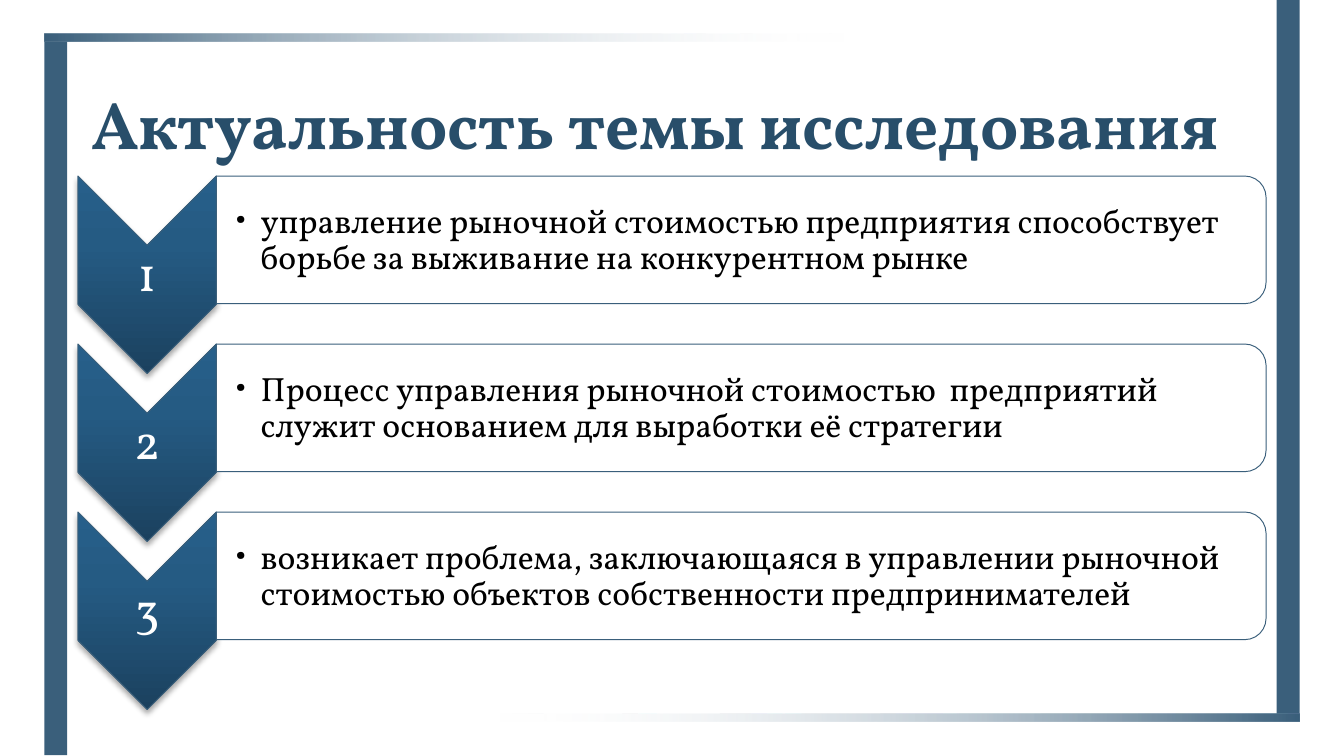
from dataclasses import dataclass

from lxml import etree
from pptx import Presentation
from pptx.dml.color import RGBColor
from pptx.enum.shapes import MSO_SHAPE
from pptx.enum.text import MSO_ANCHOR, MSO_AUTO_SIZE, PP_ALIGN
from pptx.oxml import parse_xml
from pptx.oxml.ns import nsdecls, qn
from pptx.util import Inches, Pt

RECT = MSO_SHAPE.RECTANGLE
CHEVRON = MSO_SHAPE.CHEVRON
ROUND = MSO_SHAPE.ROUND_2_SAME_RECTANGLE
MIDDLE, BOTTOM = MSO_ANCHOR.MIDDLE, MSO_ANCHOR.BOTTOM
LEFT, CENTER = PP_ALIGN.LEFT, PP_ALIGN.CENTER


@dataclass(frozen=True)
class Theme:
    font: str = "Vollkorn"
    bar: str = "3A5F7B"
    title: str = "284E6A"
    white: str = "FFFFFF"
    black: str = "000000"
    # Gradient stops: position in percent, colour, opacity in percent
    fade: tuple = ((0, "3A5F7B", 100), (65, "FFFFFF", 0), (100, "FFFFFF", 0))
    deep: tuple = ((0, "1B415F", 100), (65, "255B83", 100), (100, "275F8A", 100))
    title_size: int = 36
    label_size: int = 26
    body_size: int = 18


THEME = Theme()
WIDTH = 10
HEIGHT = WIDTH * 9 / 16
TOP, STEP = 1.31, 1.25
POINTS = [
    "управление рыночной стоимостью предприятия способствует борьбе за выживание на конкурентном рынке",
    "Процесс управления рыночной стоимостью  предприятий служит основанием для выработки её стратегии",
    "возникает проблема, заключающаяся в управлении рыночной стоимостью объектов собственности предпринимателей",
]


def style(para, size, color, bold=False):
    font = para.font
    font.name, font.size, font.bold = THEME.font, Pt(size), bold
    font.color.rgb = RGBColor.from_string(color)


def shape(slide, kind, x, y, w, h, fill=THEME.white, line=None):
    item = slide.shapes.add_shape(kind, Inches(x), Inches(y), Inches(w), Inches(h))
    item.shadow.inherit = False
    item.fill.solid()
    item.fill.fore_color.rgb = RGBColor.from_string(fill)
    if line:
        item.line.color.rgb = RGBColor.from_string(line)
        item.line.width = Pt(0.5)
    else:
        item.line.fill.background()
    return item


def turned(slide, kind, x, y, w, h):
    """Add a shape turned by 90 degrees that covers the given area."""
    item = shape(slide, kind, x + (w - h) / 2, y + (h - w) / 2, h, w, line=THEME.bar)
    item.rotation = 90
    return item


def shade(item, stops, angle):
    """Replace the solid fill by a linear gradient."""
    marks = "".join(
        f'<a:gs pos="{pos * 1000}"><a:srgbClr val="{color}">'
        f'<a:alpha val="{alpha * 1000}"/></a:srgbClr></a:gs>'
        for pos, color, alpha in stops
    )
    grad = parse_xml(
        f'<a:gradFill {nsdecls("a")} rotWithShape="0"><a:gsLst>{marks}</a:gsLst>'
        f'<a:lin ang="{angle * 60000}" scaled="0"/></a:gradFill>'
    )
    props = item._element.spPr
    props.replace(props.find(qn("a:solidFill")), grad)


def cast(item):
    """Add a soft shadow below the shape."""
    effects = item._element.spPr.find(qn("a:effectLst"))
    effects.append(parse_xml(
        f'<a:outerShdw {nsdecls("a")} blurRad="{Pt(3.1)}" dist="{Pt(2)}" dir="5400000" '
        f'rotWithShape="0"><a:srgbClr val="{THEME.black}"><a:alpha val="35000"/>'
        f'</a:srgbClr></a:outerShdw>'
    ))


def write(slide, text, x, y, w, h, inset, edge):
    """Add a text box with its own left inset and return its paragraph."""
    frame = slide.shapes.add_textbox(Inches(x), Inches(y), Inches(w), Inches(h)).text_frame
    frame.word_wrap = True
    frame.vertical_anchor = MIDDLE
    frame.margin_left = Inches(inset)
    frame.margin_top = frame.margin_right = frame.margin_bottom = Inches(edge)
    frame.text = text
    para = frame.paragraphs[0]
    para.line_spacing = 0.9
    return para


def bullet(para):
    props = para._p.get_or_add_pPr()
    props.set("marL", str(Inches(0.19)))
    props.set("indent", str(Inches(-0.19)))
    etree.SubElement(props, qn("a:buFont")).set("typeface", THEME.font)
    etree.SubElement(props, qn("a:buChar")).set("char", "•")


def add_title(slide, text):
    title = slide.shapes.title
    title.left, title.top = Inches(0.58), Inches(0.38)
    title.width, title.height = Inches(8.83), Inches(0.88)
    frame = title.text_frame
    frame.text = text
    frame.auto_size = MSO_AUTO_SIZE.NONE
    frame.vertical_anchor = BOTTOM
    para = frame.paragraphs[0]
    para.alignment = LEFT
    style(para, THEME.title_size, THEME.title, True)


def add_frame(slide):
    for x, y in ((9.5, 0), (0.33, 0.31)):
        shape(slide, RECT, x, y, 0.17, 5.31, THEME.bar)
    for x, y, angle in ((0.5, 5.31, 180), (0.33, 0.25, 0)):
        shade(shape(slide, RECT, x, y, 9.17, 0.06), THEME.fade, angle)


def add_point(slide, num, text, y):
    arrow = turned(slide, CHEVRON, 0.58, y, 1.03, 1.47)
    shade(arrow, THEME.deep, 270)
    cast(arrow)
    label = write(slide, str(num), 0.58, y + 0.52, 1.03, 0.44, 0.02, 0.02)
    label.alignment = CENTER
    style(label, THEME.label_size, THEME.white)

    turned(slide, ROUND, 1.61, y, 7.81, 0.95)
    body = write(slide, text, 1.61, y + 0.05, 7.76, 0.86, 0.14, 0.01)
    body.level = 1
    bullet(body)
    style(body, THEME.body_size, THEME.black)


def main():
    deck = Presentation()
    deck.slide_width, deck.slide_height = Inches(WIDTH), Inches(HEIGHT)
    slide = deck.slides.add_slide(deck.slide_layouts[5])
    add_frame(slide)
    add_title(slide, "Актуальность темы исследования")
    for row, text in enumerate(POINTS):
        add_point(slide, row + 1, text, TOP + row * STEP)
    deck.save("out.pptx")


if __name__ == "__main__":
    main()
